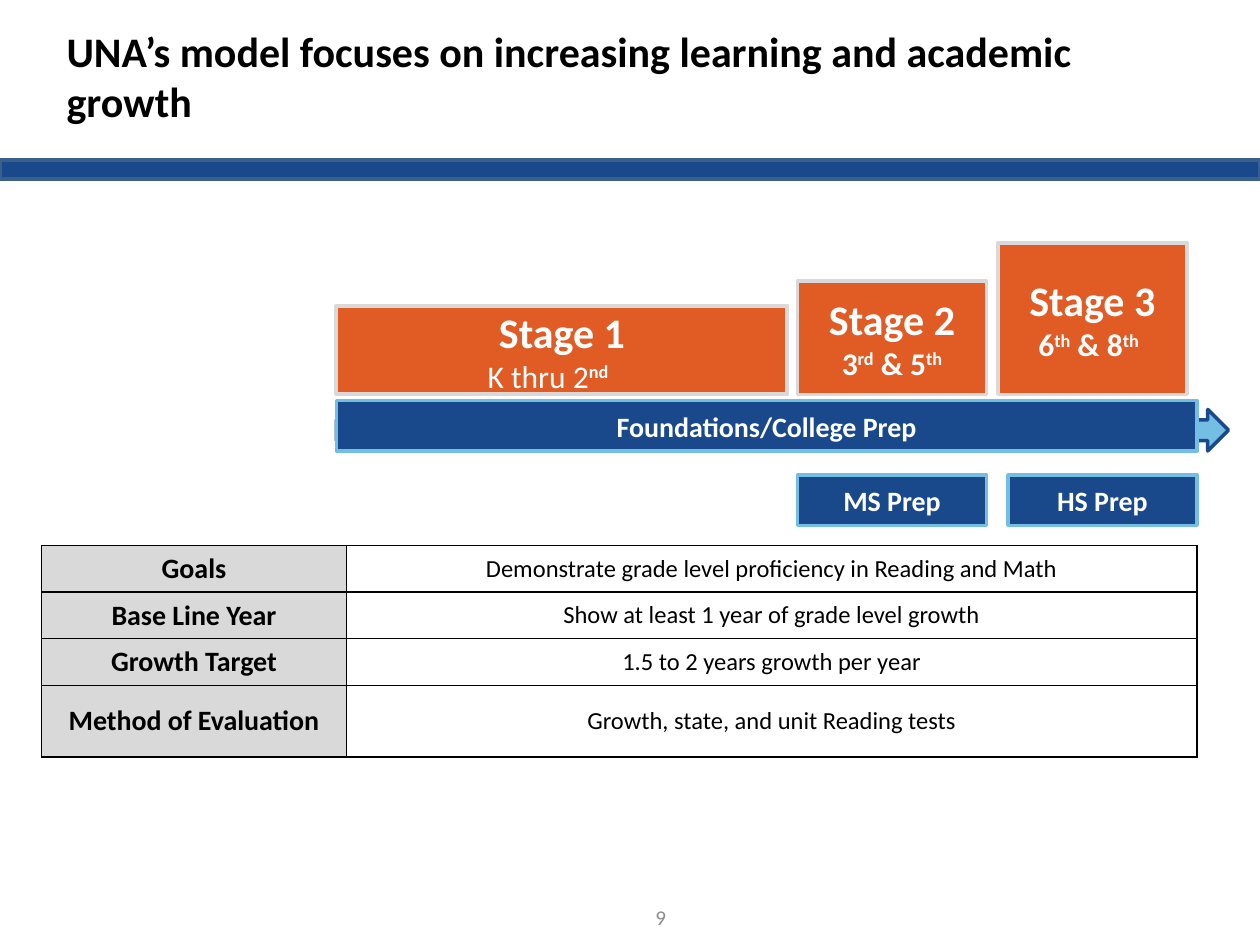
import dataclasses

import pptx
import pptx.dml.color
import pptx.enum.shapes
import pptx.enum.text
import pptx.oxml
import pptx.oxml.ns
import pptx.util

Inches = pptx.util.Inches
Pt = pptx.util.Pt
ShapeType = pptx.enum.shapes.MSO_SHAPE
Anchor = pptx.enum.text.MSO_ANCHOR
Align = pptx.enum.text.PP_ALIGN


@dataclasses.dataclass(frozen=True)
class Theme:
    """Colours, font and type sizes of the slide."""
    font: str = "Calibri"
    blue: str = "19498B"
    blue_edge: str = "3A5F8C"
    sky: str = "73BEE2"
    orange: str = "E15C25"
    grey: str = "D9D9D9"
    muted: str = "8C8C8C"
    white: str = "FFFFFF"
    black: str = "000000"
    heading: int = 24
    grades: int = 18
    label: int = 16
    body: int = 14
    number: int = 12


THEME = Theme()


def rgb(value):
    """Turn a hex string into a colour."""
    return pptx.dml.color.RGBColor.from_string(value)


def add_run(paragraph, text, size, color, bold=False, raised=False):
    """Append a formatted run to a paragraph."""
    run = paragraph.add_run()
    run.text = text
    formats = {"name": THEME.font, "size": Pt(size), "bold": bold}
    for name, value in formats.items():
        setattr(run.font, name, value)
    run.font.color.rgb = rgb(color)
    if raised:
        run.font._element.set("baseline", "30000")


def add_box(slide, box, fill, line, width=2, kind=ShapeType.RECTANGLE):
    """Draw a filled, outlined shape in the given box."""
    shape = slide.shapes.add_shape(kind, *map(Inches, box))
    shape.shadow.inherit = False
    shape.fill.solid()
    shape.fill.fore_color.rgb = rgb(fill)
    shape.line.color.rgb = rgb(line)
    shape.line.width = Pt(width)
    shape.text_frame.vertical_anchor = Anchor.MIDDLE
    shape.text_frame.paragraphs[0].alignment = Align.CENTER
    return shape


def add_text(slide, box, text, size, color, bold, anchor, alignment):
    """Place one paragraph of text in the given box."""
    frame = slide.shapes.add_textbox(*map(Inches, box)).text_frame
    frame.word_wrap = True
    frame.vertical_anchor = anchor
    frame.paragraphs[0].alignment = alignment
    add_run(frame.paragraphs[0], text, size, color, bold)


def add_header(slide, box):
    """Place the title and the full-width bar below it."""
    left, top, width, height = box
    add_box(slide, (left, top + height - 0.15, width, 0.15), THEME.blue, THEME.blue_edge)
    add_text(slide, (left + 0.43, top + 0.31, width - 0.86, 0.74),
             "UNA’s model focuses on increasing learning and academic growth",
             THEME.heading, THEME.black, True, Anchor.BOTTOM, Align.LEFT)


def add_stages(slide, box):
    """Stand the three stages on the bottom edge of the box."""
    left, top, width, height = box
    stages = [
        (0, 3.58, 0.7, 2.25, 0.22,
         [("K thru 2", False, False), ("nd", True, True)]),
        (3.66, 1.5, 0.9, 2, 0,
         [("3", True, False), ("rd", True, True), (" & 5", True, False), ("th", True, True)]),
        (width - 1.5, 1.5, 1.2, 2, 0.06,
         [("6", True, False), ("th", True, True), (" & 8", True, False), ("th", True, True)]),
    ]
    for number, (offset, wide, tall, line, indent, grades) in enumerate(stages, 1):
        shape = add_box(slide, (left + offset, top + height - tall, wide, tall),
                        THEME.orange, THEME.grey, line)
        frame = shape.text_frame
        add_run(frame.paragraphs[0], f"Stage {number}", THEME.heading, THEME.white, True)
        paragraph = frame.add_paragraph()
        paragraph.alignment = Align.CENTER
        paragraph._p.get_or_add_pPr().set("marR", str(Inches(indent)))
        for text, bold, raised in grades:
            add_run(paragraph, text, THEME.grades, THEME.white, bold, raised)


def add_prep(slide, box):
    """Place the arrow, the foundations bar and the two prep labels."""
    left, top, width, height = box
    bar, label = 0.4, 1.5
    add_box(slide, (left, top + 0.07, width + 0.25, 0.33), THEME.sky, THEME.blue,
            kind=ShapeType.RIGHT_ARROW)
    labels = {
        "Foundations/College Prep": (left, top, width),
        "MS Prep": (left + 3.66, top + height - bar, label),
        "HS Prep": (left + width - label, top + height - bar, label),
    }
    for text, (x, y, wide) in labels.items():
        shape = add_box(slide, (x, y, wide, bar), THEME.blue, THEME.sky)
        add_run(shape.text_frame.paragraphs[0], text, THEME.label, THEME.white, True)


def set_borders(cell):
    """Give a cell a thin black line on every side."""
    properties = cell._tc.get_or_add_tcPr()
    for position, side in enumerate(("lnL", "lnR", "lnT", "lnB")):
        properties.insert(position, pptx.oxml.parse_xml(
            f'<a:{side} {pptx.oxml.ns.nsdecls("a")} w="{Pt(1)}"><a:solidFill>'
            f'<a:srgbClr val="{THEME.black}"/></a:solidFill></a:{side}>'))


def add_goals(slide, box):
    """Place the table of goals and measures."""
    rows = [
        ("Goals", "Demonstrate grade level proficiency in Reading and Math"),
        ("Base Line Year", "Show at least 1 year of grade level growth"),
        ("Growth Target", "1.5 to 2 years growth per year"),
        ("Method of Evaluation", "Growth, state, and unit Reading tests"),
    ]
    styles = [(THEME.grey, THEME.label, True), (THEME.white, THEME.body, False)]
    table = slide.shapes.add_table(len(rows), 2, *map(Inches, box)).table
    for column, width in zip(table.columns, (2.42, box[2] - 2.42)):
        column.width = Inches(width)
    for row, height in zip(table.rows, (0.37, 0.37, 0.37, 0.57)):
        row.height = Inches(height)
    for row, texts in zip(table.rows, rows):
        for cell, text, (fill, size, bold) in zip(row.cells, texts, styles):
            cell.fill.solid()
            cell.fill.fore_color.rgb = rgb(fill)
            cell.vertical_anchor = Anchor.MIDDLE
            paragraph = cell.text_frame.paragraphs[0]
            paragraph.alignment = Align.CENTER
            add_run(paragraph, text, size, THEME.black, bold)
            set_borders(cell)


def main():
    """Build the slide and save it."""
    presentation = pptx.Presentation()
    presentation.slide_width = Inches(10)
    presentation.slide_height = Inches(7.5)
    slide = presentation.slides.add_slide(presentation.slide_layouts[6])
    add_header(slide, (0, 0, 10, 1.42))
    add_stages(slide, (2.67, 1.93, 6.75, 1.2))
    add_prep(slide, (2.67, 3.18, 6.83, 0.99))
    add_goals(slide, (0.33, 4.33, 9.17, 1.68))
    add_text(slide, (4.08, 7.08, 2.33, 0.4), "9", THEME.number, THEME.muted, False,
             Anchor.MIDDLE, Align.CENTER)
    presentation.save("out.pptx")


if __name__ == "__main__":
    main()
